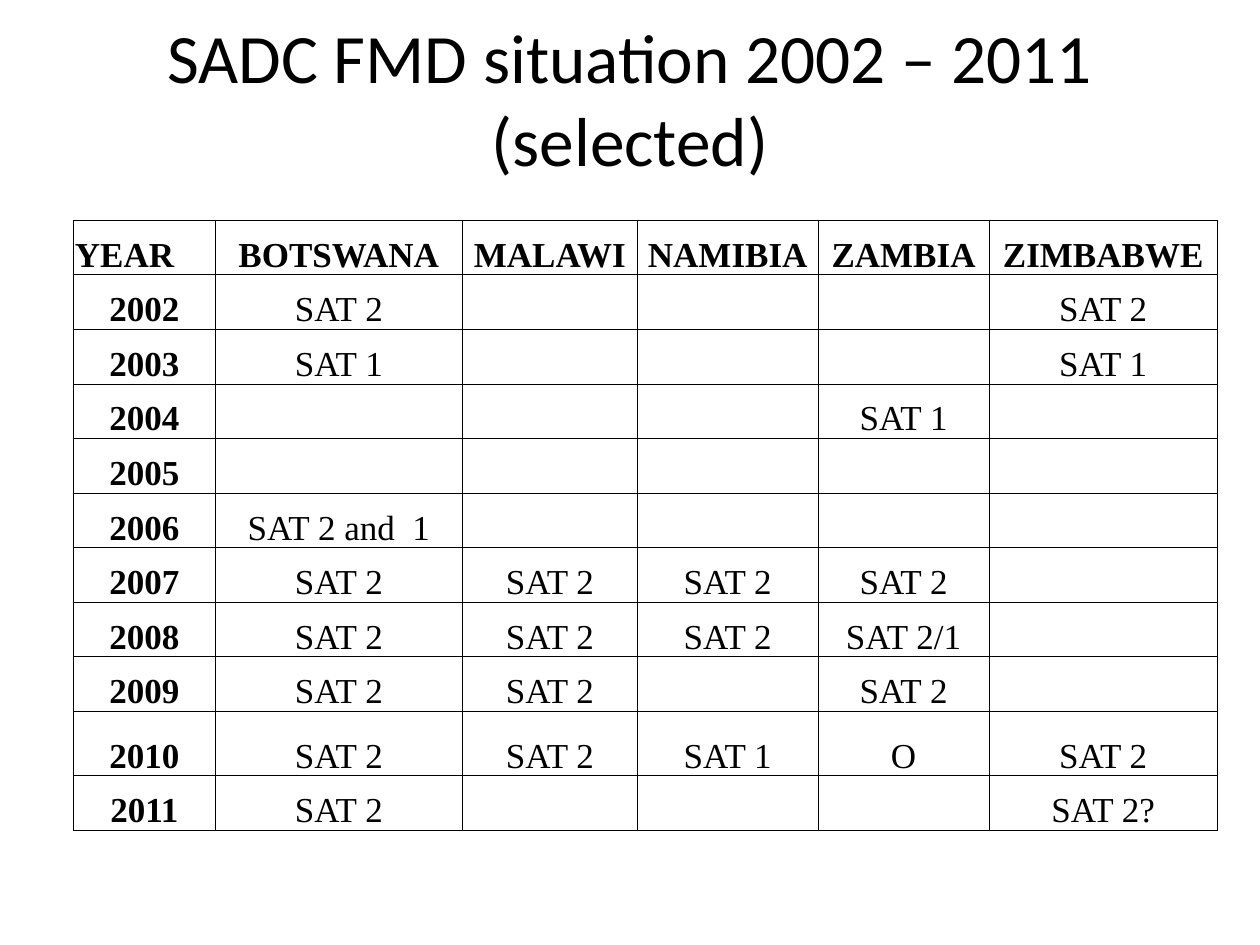
from lxml import etree
from pptx import Presentation
from pptx import util as u
from pptx.dml.color import RGBColor
from pptx.enum import text
from pptx.oxml import ns

BLACK = RGBColor(0x00, 0x00, 0x00)
WHITE = RGBColor(0xFF, 0xFF, 0xFF)

# Content
TITLE = "SADC FMD situation 2002 – 2011 (selected)"
HEADER = ["YEAR", "BOTSWANA", "MALAWI", "NAMIBIA", "ZAMBIA", "ZIMBABWE"]
OUTBREAKS = [
    ["2002", "SAT 2", "", "", "", "SAT 2"],
    ["2003", "SAT 1", "", "", "", "SAT 1"],
    ["2004", "", "", "", "SAT 1", ""],
    ["2005", "", "", "", "", ""],
    ["2006", "SAT 2 and  1", "", "", "", ""],
    ["2007", "SAT 2", "SAT 2", "SAT 2", "SAT 2", ""],
    ["2008", "SAT 2", "SAT 2", "SAT 2", "SAT 2/1", ""],
    ["2009", "SAT 2", "SAT 2", "", "SAT 2", ""],
    ["2010", "SAT 2", "SAT 2", "SAT 1", "O", "SAT 2"],
    ["2011", "SAT 2", "", "", "", "SAT 2?"],
]

# Layout in centimetres
TABLE_LEFT, TABLE_TOP = 1.48, 4.44
COLUMN_WIDTHS = [2.86, 4.98, 3.53, 3.64, 3.45, 4.6]
ROW_HEIGHT = 1.1
TALL_ROWS = {"2010": 1.3}
BORDER_WIDTH = u.Pt(0.5)


def write(frame, content, *, font, size, bold=False, align=text.PP_ALIGN.CENTER):
    paragraph = frame.paragraphs[0]
    paragraph.alignment = align
    if not content:
        return
    run = paragraph.add_run()
    run.text = content
    run.font.name = font
    run.font.size = u.Pt(size)
    run.font.bold = bold
    run.font.color.rgb = BLACK


def add_borders(cell):
    properties = cell._tc.get_or_add_tcPr()
    for side in ("a:lnL", "a:lnR", "a:lnT", "a:lnB"):
        line = etree.SubElement(properties, ns.qn(side), w=str(BORDER_WIDTH))
        fill = etree.SubElement(line, ns.qn("a:solidFill"))
        etree.SubElement(fill, ns.qn("a:srgbClr"), val=str(BLACK))


presentation = Presentation()
presentation.slide_width, presentation.slide_height = u.Cm(25.4), u.Cm(19.05)
slide = presentation.slides.add_slide(presentation.slide_layouts[6])

# Title
title = slide.shapes.add_textbox(u.Cm(1.27), u.Cm(0.76), u.Cm(22.86), u.Cm(2.41))
title.text_frame.word_wrap = True
title.text_frame.vertical_anchor = text.MSO_ANCHOR.MIDDLE
write(title.text_frame, TITLE, font="Calibri", size=39.6)

# Table grid
rows = [HEADER] + OUTBREAKS
row_heights = [TALL_ROWS.get(row[0], ROW_HEIGHT) for row in rows]
table = slide.shapes.add_table(
    len(rows), len(HEADER), u.Cm(TABLE_LEFT), u.Cm(TABLE_TOP),
    u.Cm(sum(COLUMN_WIDTHS)), u.Cm(sum(row_heights))).table
table.first_row = table.horz_banding = False
for column, width in zip(table.columns, COLUMN_WIDTHS):
    column.width = u.Cm(width)
for table_row, height in zip(table.rows, row_heights):
    table_row.height = u.Cm(height)

# Table cells
for row_index, row in enumerate(rows):
    for column_index, content in enumerate(row):
        cell = table.cell(row_index, column_index)
        cell.margin_left = cell.margin_right = cell.margin_top = u.Cm(0.03)
        cell.margin_bottom = 0
        cell.vertical_anchor = text.MSO_ANCHOR.BOTTOM
        add_borders(cell)
        cell.fill.solid()
        cell.fill.fore_color.rgb = WHITE
        write(cell.text_frame, content, font="Times New Roman", size=20,
              bold=row_index == 0 or column_index == 0,
              align=text.PP_ALIGN.LEFT if content == "YEAR" else text.PP_ALIGN.CENTER)

presentation.save("out.pptx")
